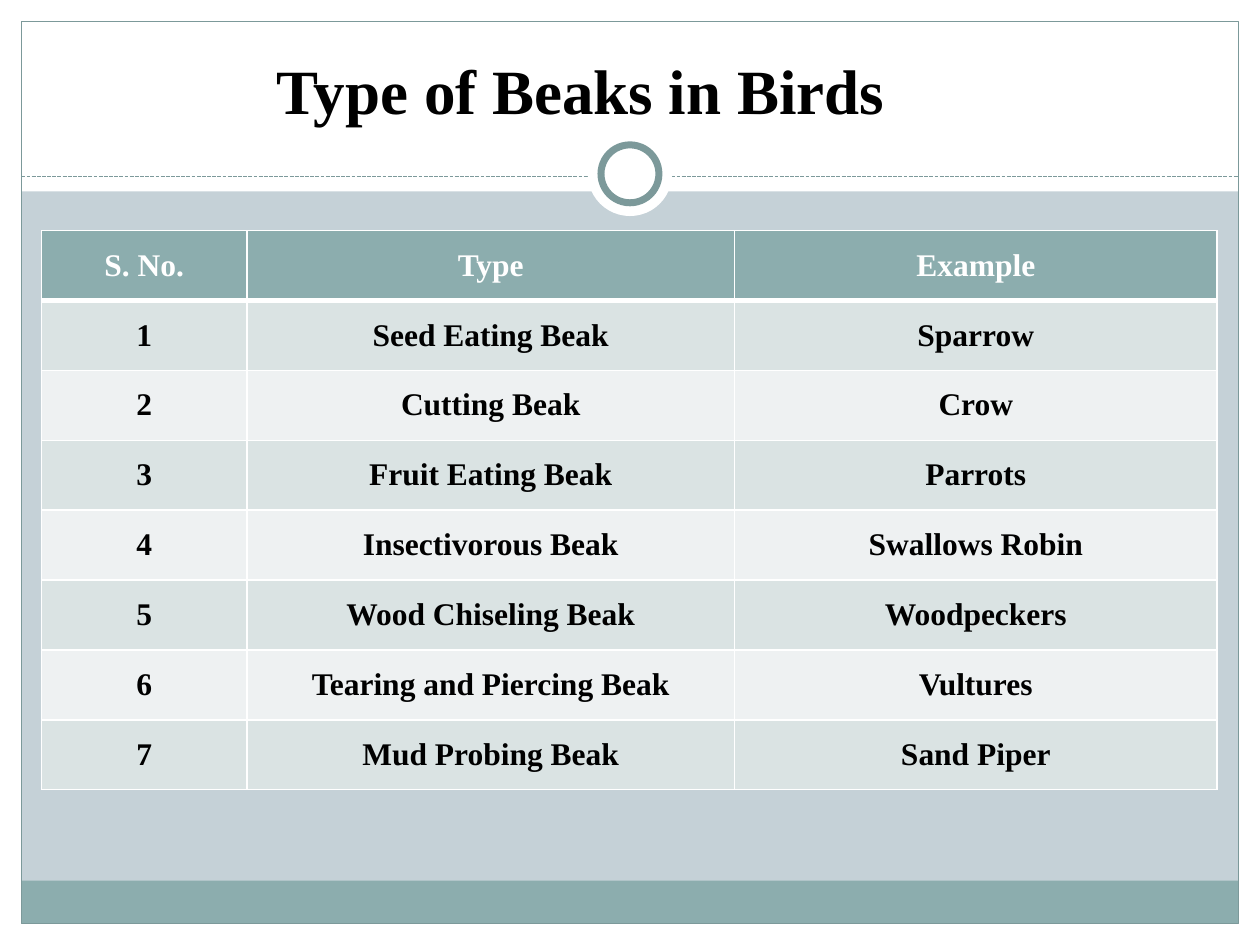
import pptx
import pptx.util
import pptx.dml.color
import pptx.enum.dml
import pptx.enum.shapes
import pptx.enum.text
import pptx.oxml.ns
from lxml import etree

Inches, Pt = pptx.util.Inches, pptx.util.Pt
SHAPE = pptx.enum.shapes.MSO_SHAPE
FONT = "Times New Roman"
WHITE, BLACK = "FFFFFF", "000000"
BACKGROUND, TEAL, DARK_TEAL = "C5D1D7", "8CADAE", "7C999A"
BANDS = ("DAE3E3", "EEF1F2")

BEAKS = [
    (" S. No. ", "Type", "Example"),
    ("1", "Seed Eating Beak", "Sparrow"),
    ("2", "Cutting Beak", "Crow"),
    ("3", "Fruit Eating Beak", "Parrots"),
    ("4", "Insectivorous Beak", "Swallows Robin"),
    ("5", "Wood Chiseling Beak", "Woodpeckers"),
    ("6", "Tearing and Piercing Beak", "Vultures"),
    ("7", "Mud Probing Beak", "Sand Piper"),
]


def rgb(color):
    return pptx.dml.color.RGBColor.from_string(color)


def add_shape(slide, kind, box, fill=None, line=None, width=0.75):
    sp = slide.shapes.add_shape(kind, *map(Inches, box))
    sp.shadow.inherit = False
    if fill:
        sp.fill.solid()
        sp.fill.fore_color.rgb = rgb(fill)
    else:
        sp.fill.background()
    if line:
        sp.line.color.rgb = rgb(line)
        sp.line.width = Pt(width)
    else:
        sp.line.fill.background()


def add_text(tf, text, size, color):
    p = tf.paragraphs[0]
    p.alignment = pptx.enum.text.PP_ALIGN.CENTER
    r = p.add_run()
    r.text = text
    r.font.name = FONT
    r.font.size = Pt(size)
    r.font.bold = True
    r.font.color.rgb = rgb(color)


def add_frame(slide, box):
    left, top, width, height = box
    margin, header, footer = 0.17, 1.52, 0.34
    inner = width - 2 * margin
    bottom = top + height - margin

    # White margins and header band
    for band in (
        (left, bottom, width, margin),
        (left, top, width, header),
        (left, top, margin, height),
        (left + width - margin, top, margin, height),
    ):
        add_shape(slide, SHAPE.RECTANGLE, band, WHITE)

    # Footer bar and outline
    add_shape(slide, SHAPE.RECTANGLE,
              (left + margin, bottom - footer, inner, footer), TEAL)
    add_shape(slide, SHAPE.RECTANGLE,
              (left + margin, top + margin, inner, height - 2 * margin),
              line=DARK_TEAL)

    # Dashed divider
    y = Inches(top + 1.4)
    line = slide.shapes.add_connector(
        pptx.enum.shapes.MSO_CONNECTOR.STRAIGHT,
        Inches(left + margin), y, Inches(left + width - margin), y)
    line.line.color.rgb = rgb(DARK_TEAL)
    line.line.width = Pt(0.75)
    line.line.dash_style = pptx.enum.dml.MSO_LINE.SQUARE_DOT
    etree.SubElement(line._element.spPr, pptx.oxml.ns.qn("a:effectLst"))

    # Ring on the divider
    center_x, center_y = left + width / 2, top + 1.38
    for size, color in ((0.67, None), (0.46, DARK_TEAL)):
        add_shape(slide, SHAPE.OVAL,
                  (center_x - size / 2, center_y - size / 2, size, size),
                  WHITE, color, 4)


def add_title(slide, box, text):
    tf = slide.shapes.add_textbox(*map(Inches, box)).text_frame
    tf.word_wrap = True
    tf.vertical_anchor = pptx.enum.text.MSO_ANCHOR.MIDDLE
    add_text(tf, text, 36, BLACK)


def set_borders(cell, widths):
    tcPr = cell._tc.get_or_add_tcPr()
    for side, width in zip("LRTB", widths):
        ln = etree.SubElement(tcPr, pptx.oxml.ns.qn("a:ln" + side), w=str(Pt(width)))
        fill = etree.SubElement(ln, pptx.oxml.ns.qn("a:solidFill"))
        etree.SubElement(fill, pptx.oxml.ns.qn("a:srgbClr"), val=WHITE)


def add_beak_table(slide, box, rows, col_widths):
    table = slide.shapes.add_table(
        len(rows), len(col_widths), *map(Inches, box)).table
    for column, width in zip(table.columns, col_widths):
        column.width = Inches(width)
    for i, row in enumerate(rows):
        table.rows[i].height = Inches(box[3] / len(rows))
        fill = BANDS[(i - 1) % 2] if i else TEAL
        for j, text in enumerate(row):
            cell = table.cell(i, j)
            top, bottom = (3 if i == 1 else 1), (3 if i == 0 else 1)
            set_borders(cell, (1, 1, top, bottom))
            cell.fill.solid()
            cell.fill.fore_color.rgb = rgb(fill)
            cell.vertical_anchor = pptx.enum.text.MSO_ANCHOR.MIDDLE
            add_text(cell.text_frame, text, 18, BLACK if i else WHITE)


def main():
    prs = pptx.Presentation()
    prs.slide_width, prs.slide_height = Inches(10), Inches(7.5)
    slide = prs.slides.add_slide(prs.slide_layouts[6])
    slide.background.fill.solid()
    slide.background.fill.fore_color.rgb = rgb(BACKGROUND)

    add_frame(slide, (0, 0, 10, 7.5))
    add_title(slide, (0.67, 0.33, 8, 0.75), "Type of Beaks in Birds ")
    add_beak_table(slide, (0.33, 1.83, 9.33, 4.44), BEAKS, (1.63, 3.87, 3.83))
    prs.save("out.pptx")


if __name__ == "__main__":
    main()
